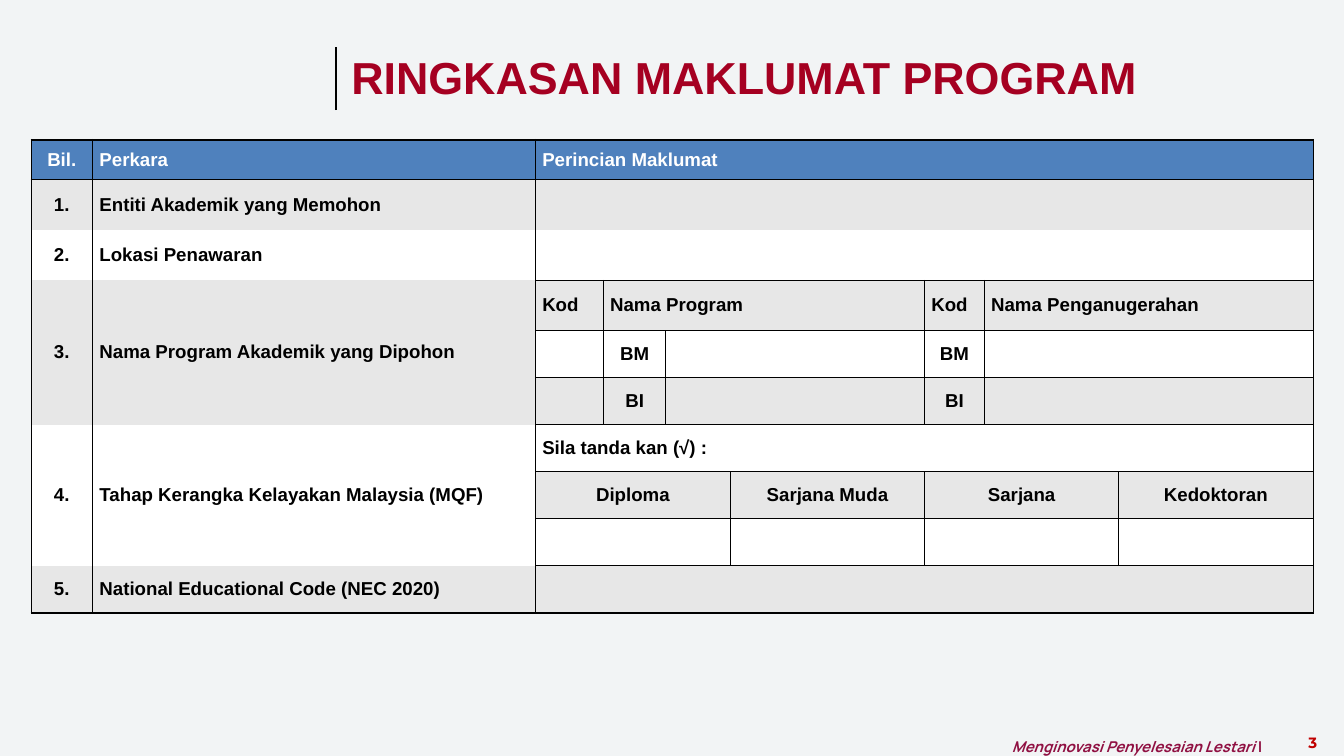
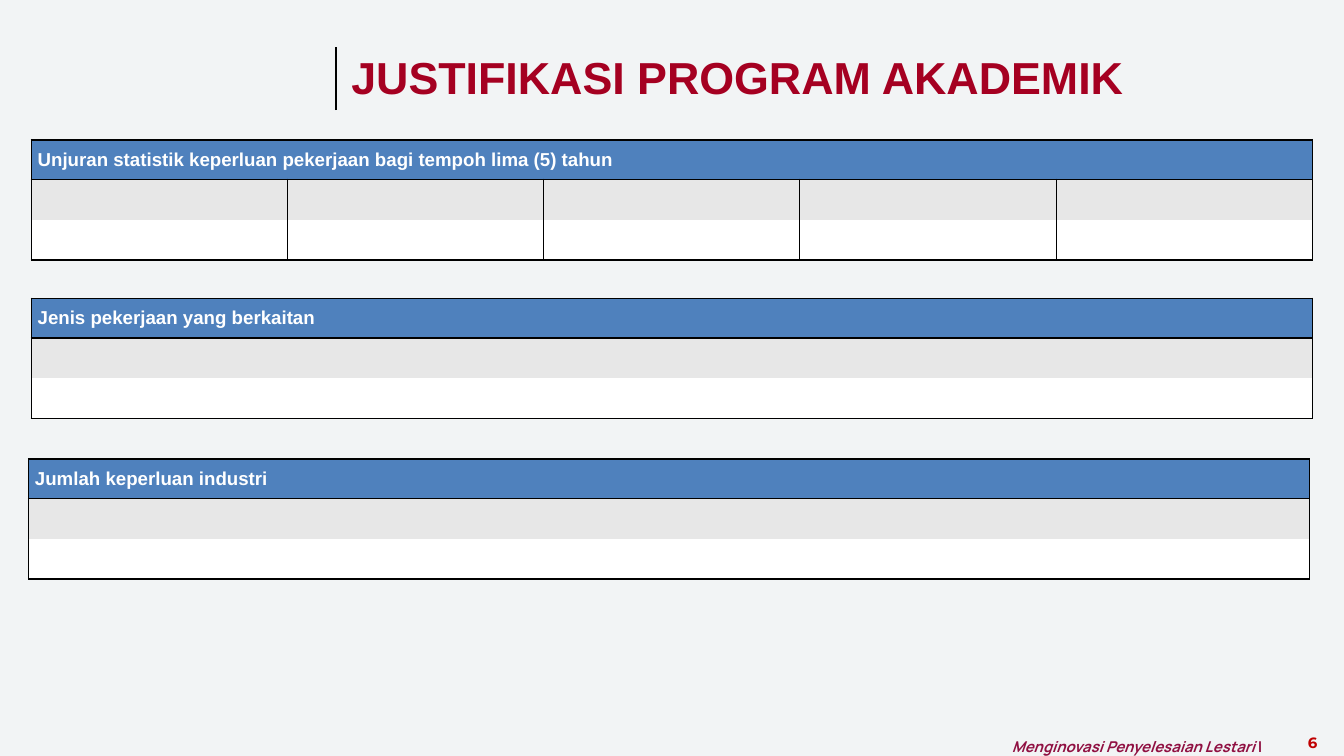
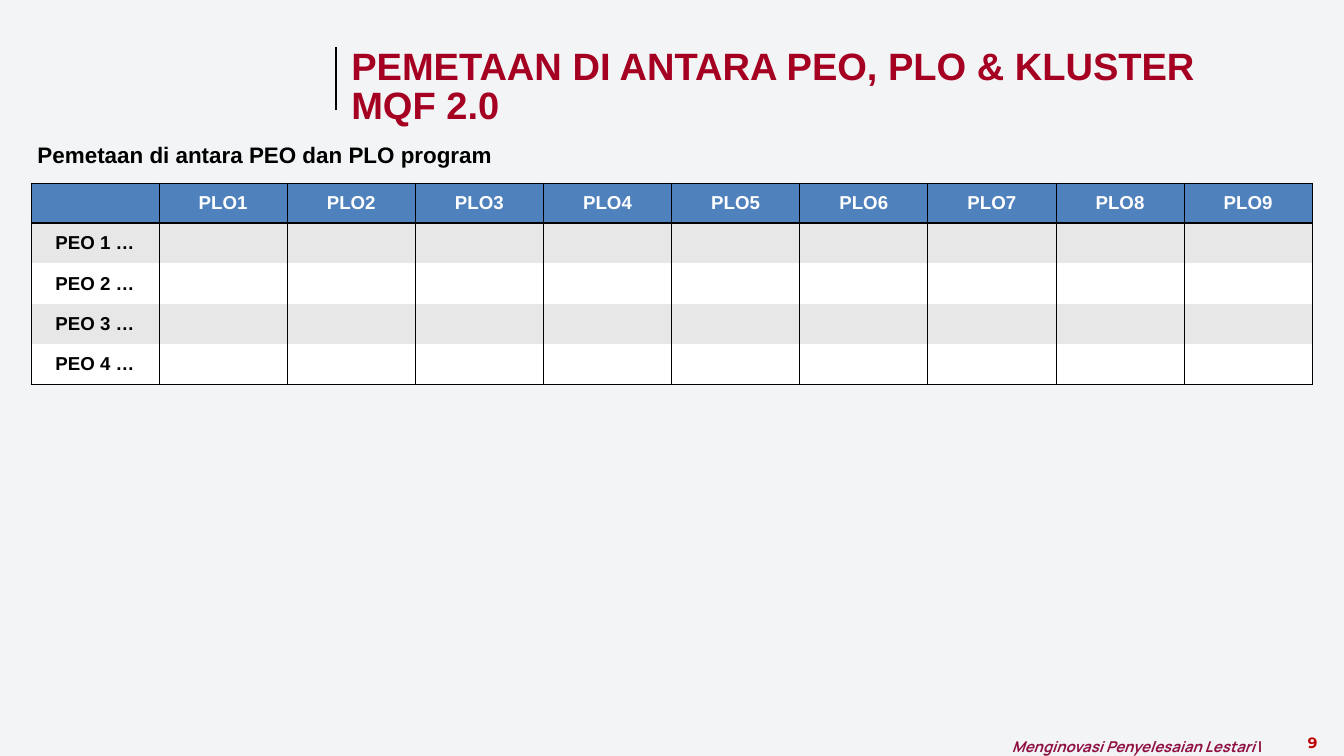
from dataclasses import dataclass

from lxml.etree import SubElement
from pptx import Presentation
from pptx.dml.color import RGBColor
from pptx.enum.shapes import MSO_CONNECTOR
from pptx.enum.text import MSO_ANCHOR, MSO_AUTO_SIZE, PP_ALIGN
from pptx.oxml.ns import qn
from pptx.util import Inches, Pt


@dataclass(frozen=True)
class Theme:
    # Colours
    back: str = "F2F4F5"
    ink: str = "000000"
    white: str = "FFFFFF"
    gray: str = "E7E7E7"
    blue: str = "4F81BD"
    red: str = "A50021"
    wine: str = "901042"
    page: str = "C00000"
    # Fonts and type sizes
    main: str = "Arial"
    motto: str = "Manrope"
    digit: str = "Montserrat"
    title: float = 48
    tight: float = 40.8
    lead: float = 24
    body: float = 20
    foot: float = 16
    # Shared table measures
    left: float = 0.46
    wide: float = 19.07
    head: float = 0.59
    row: float = 0.6
    plain: str = "{2D5ABB26-0587-4C30-8999-92F81FD0307C}"


T = Theme()


def add_run(para, text, size, color, font=T.main, slant=False):
    run = para.add_run()
    run.text = text
    face = run.font
    face.name, face.size = font, Pt(size)
    face.bold, face.italic = True, slant
    face.color.rgb = RGBColor.from_string(color)


def add_text(slide, box, grow=False):
    """Add a wrapping text box; return its frame and first paragraph."""
    frame = slide.shapes.add_textbox(*map(Inches, box)).text_frame
    frame.word_wrap = True
    if grow:
        frame.auto_size = MSO_AUTO_SIZE.SHAPE_TO_FIT_TEXT
    return frame, frame.paragraphs[0]


# Shared slide frame: background, footer motto, title bar and page number
def add_frame(deck, page):
    slide = deck.slides.add_slide(deck.slide_layouts[6])
    fill = slide.background.fill
    fill.solid()
    fill.fore_color.rgb = RGBColor.from_string(T.back)

    frame, para = add_text(slide, (15.06, 10.87, 4.2, 0.38), grow=True)
    frame.margin_left = frame.margin_right = 0
    frame.margin_top = frame.margin_bottom = 0
    para.line_spacing = 1.4
    add_run(para, "Menginovasi Penyelesaian Lestari ", T.foot, T.wine, T.motto, True)
    add_run(para, "|", T.foot, T.wine, T.motto)

    bar = slide.shapes.add_connector(
        MSO_CONNECTOR.STRAIGHT, Inches(5), Inches(1.64), Inches(5), Inches(0.7))
    bar.line.color.rgb = RGBColor.from_string(T.ink)
    bar.line.width = Pt(3)
    SubElement(bar._element.spPr, qn("a:effectLst"))

    _, para = add_text(slide, (19.07, 10.87, 0.93, 0.37), grow=True)
    para.alignment = PP_ALIGN.CENTER
    add_run(para, str(page), T.foot, T.page, T.digit)
    return slide


def add_title(slide, text, size=T.title, wide=12.78, space=None):
    _, para = add_text(slide, (5.13, 0.69, wide, 1.25))
    para.line_spacing = space
    add_run(para, text, size, T.red)


def add_edges(cell, edges):
    props = cell._tc.get_or_add_tcPr()
    for side in "LRTB":
        if side in edges:
            line = SubElement(props, qn("a:ln" + side), w=str(Pt(edges[side])))
            fill = SubElement(line, qn("a:solidFill"))
            SubElement(fill, qn("a:srgbClr"), val=T.ink)


# Banded table; words maps (row, col) to (text, centred), spans to (tall, wide)
def add_grid(slide, x, y, cols, rows, words, spans={}, boxed=()):
    table = slide.shapes.add_table(
        len(rows), len(cols), Inches(x), Inches(y),
        Inches(sum(cols)), Inches(sum(rows))).table
    table.first_row = table.horz_banding = False
    table._tbl.tblPr.find(qn("a:tableStyleId")).text = T.plain
    for col, wide in zip(table.columns, cols):
        col.width = Inches(wide)
    for row, tall in zip(table.rows, rows):
        row.height = Inches(tall)

    # Bands and borders
    for r in range(len(rows)):
        for c in range(len(cols)):
            cell = table.cell(r, c)
            edges = {"L": 1, "R": 1}
            if r == 0:
                edges |= {"T": 2, "B": 2}
            elif r == len(rows) - 1:
                edges["B"] = 2
            elif (r, c) in boxed:
                edges |= {"T": 1, "B": 1}
            add_edges(cell, edges)
            cell.fill.solid()
            band = T.blue if r == 0 else T.gray if r % 2 else T.white
            cell.fill.fore_color.rgb = RGBColor.from_string(band)

    # Merged cells, then wording
    for (r, c), (tall, wide) in spans.items():
        table.cell(r, c).merge(table.cell(r + tall - 1, c + wide - 1))
    for (r, c), (text, mid) in words.items():
        cell = table.cell(r, c)
        cell.vertical_anchor = MSO_ANCHOR.MIDDLE
        para = cell.text_frame.paragraphs[0]
        if mid:
            para.alignment = PP_ALIGN.CENTER
        add_run(para, text, T.body, T.white if r == 0 else T.ink)


# Programme summary
def add_sum(deck):
    slide = add_frame(deck, 3)
    words = {(0, 0): ("Bil.", True), (0, 1): ("Perkara", False),
             (0, 2): ("Perincian Maklumat", False)}
    spans = {(r, 2): (1, 7) for r in (0, 1, 2, 6, 9)}

    # Numbered items and the rows they start on
    items = [
        (1, "Entiti Akademik yang Memohon"),
        (2, "Lokasi Penawaran"),
        (3, "Nama Program Akademik yang Dipohon"),
        (6, "Tahap Kerangka Kelayakan Malaysia (MQF)"),
        (9, "National Educational Code (NEC 2020)"),
    ]
    for num, (r, text) in enumerate(items, 1):
        words[r, 0] = (f"{num}.", True)
        words[r, 1] = (text, False)
    for r in (3, 6):
        spans |= {(r, 0): (3, 1), (r, 1): (3, 1)}

    # Programme and award names
    for c, text in ((2, "Kod"), (3, "Nama Program"),
                    (6, "Kod"), (7, "Nama Penganugerahan")):
        words[3, c] = (text, False)
    spans |= {(3, 3): (1, 3), (3, 7): (1, 2)}
    for r, text in ((4, "BM"), (5, "BI")):
        words |= {(r, c): (text, True) for c in (3, 6)}
        spans |= {(r, c): (1, 2) for c in (4, 7)}

    # Levels to tick
    words[6, 2] = ("Sila tanda kan (√) :", False)
    for c, text in ((2, "Diploma"), (5, "Sarjana Muda"),
                    (6, "Sarjana"), (8, "Kedoktoran")):
        words[7, c] = (text, True)
    for r in (7, 8):
        spans |= {(r, 2): (1, 3), (r, 6): (1, 2)}

    cols = [0.92, 6.59, 1.01, 0.93, 0.96, 2.89, 0.89, 2, 2.89]
    rows = [T.head] + [0.75] * 3 + [0.7] * 6
    boxed = {(r, c) for r in range(3, 9) for c in range(2, 9)}
    add_grid(slide, T.left, 2.08, cols, rows, words, spans, boxed)
    add_title(slide, "RINGKASAN MAKLUMAT PROGRAM")


# Justification: three tables with a full-width heading
def add_case(deck):
    slide = add_frame(deck, 6)
    parts = [
        (T.left, 2.08, 5,
         "Unjuran statistik keperluan pekerjaan bagi tempoh lima (5) tahun"),
        (T.left, 4.44, 1, "Jenis pekerjaan yang berkaitan"),
        (0.42, 6.83, 1, "Jumlah keperluan industri"),
    ]
    for x, y, count, text in parts:
        spans = {(0, 0): (1, count)} if count > 1 else {}
        add_grid(slide, x, y, [T.wide / count] * count,
                 [T.head, T.row, T.row], {(0, 0): (text, False)}, spans)
    add_title(slide, "JUSTIFIKASI PROGRAM AKADEMIK")


# Mapping of PEO rows to PLO columns
def add_map(deck):
    slide = add_frame(deck, 9)
    words = {(0, n): (f"PLO{n}", True) for n in range(1, 10)}
    words |= {(n, 0): (f"PEO {n} …", True) for n in range(1, 5)}
    add_grid(slide, T.left, 2.73, [T.wide / 10] * 10,
             [T.head] + [T.row] * 4, words)

    frame, para = add_text(slide, (T.left, 1.93, 15.26, 0.75))
    frame.vertical_anchor = MSO_ANCHOR.MIDDLE
    add_run(para, "Pemetaan di antara PEO dan PLO program", T.lead, T.ink)
    add_title(slide, "PEMETAAN DI ANTARA PEO, PLO & KLUSTER MQF 2.0",
              T.tight, 12.93, 0.85)


def main():
    deck = Presentation()
    deck.slide_width, deck.slide_height = Inches(20), Inches(11.25)
    for build in (add_sum, add_case, add_map):
        build(deck)
    deck.save("out.pptx")


if __name__ == "__main__":
    main()
